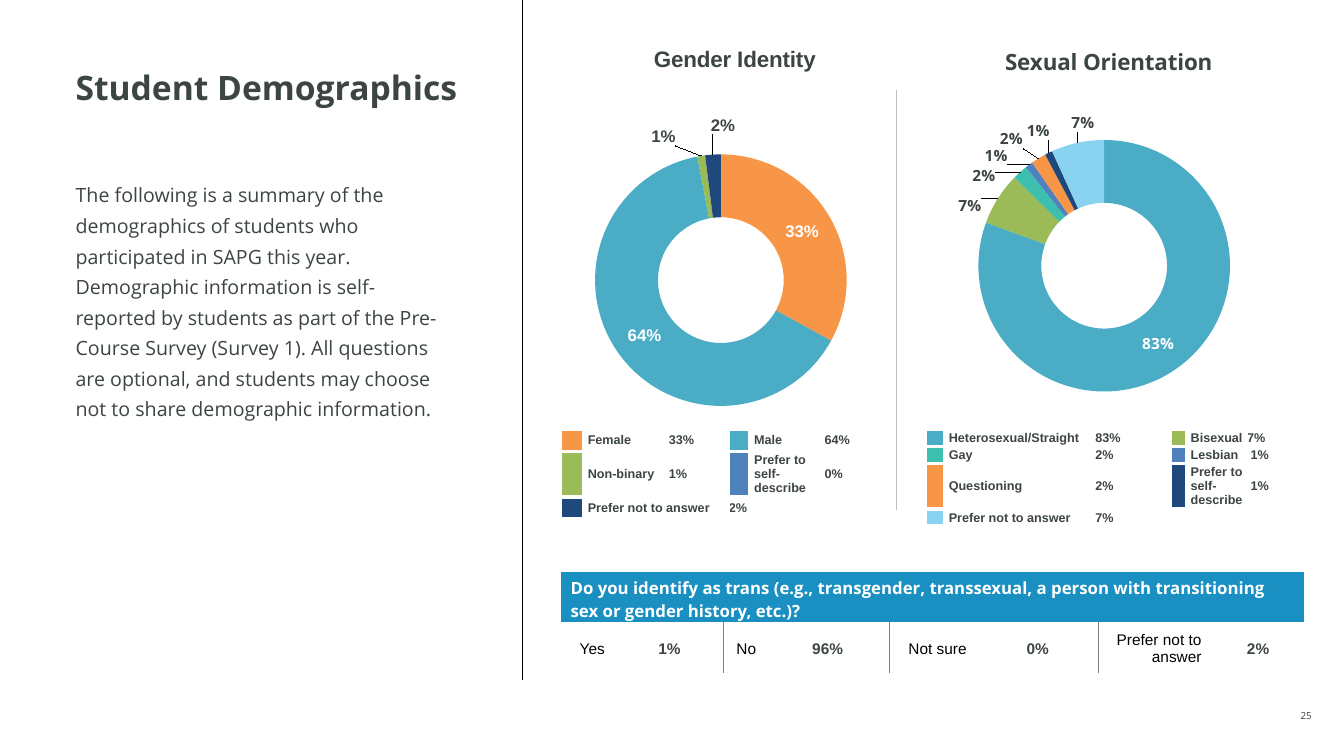
import math
from lxml import etree
from pptx import Presentation
from pptx import util as u
from pptx.chart import data as chart_data
from pptx.dml.color import RGBColor
from pptx.enum import chart as chart_enum
from pptx.enum import shapes, text
from pptx.oxml import parse_xml
from pptx.oxml.ns import nsdecls, qn

COLORS = {
    "ink": "3C4543", "white": "FFFFFF", "black": "000000", "banner": "1990C1",
    "divider": "BFBFBF", "separator": "808080", "orange": "F79646",
    "teal": "4BACC6", "green": "9BBB59", "blue": "4F81BD", "navy": "1F497D",
    "mint": "3CBFAE", "sky": "8AD3F0",
}
SUMMARY = (
    "The following is a summary of the demographics of students who participated "
    "in SAPG this year. Demographic information is self-reported by students as "
    "part of the Pre-Course Survey\u00a0(Survey 1). All questions are optional, and "
    "students may choose not to share demographic information."
)
TRANS_QUESTION = (
    "Do you identify as trans (e.g., transgender, transsexual, a person with "
    "transitioning sex or\u00a0gender history, etc.)?"
)
TRANS_ANSWERS = [("Yes", "1%"), ("No", "96%"), ("Not sure", "0%"),
                 ("Prefer not to answer", "2%")]
PERCENT = "0%;;"  # hides zero shares


def rgb(name):
    return RGBColor.from_string(COLORS[name])


def style_font(font, size, color="ink", bold=False, name="Open Sans"):
    font.size, font.bold, font.name = u.Pt(size), bold, name
    font.color.rgb = rgb(color)


def add_text(page, box, words, size, bold=False, spacing=1.0, align=None,
             anchor=text.MSO_ANCHOR.TOP):
    frame = page.shapes.add_textbox(*map(u.Inches, box)).text_frame
    frame.word_wrap, frame.vertical_anchor = True, anchor
    frame.margin_left = frame.margin_right = frame.margin_top = frame.margin_bottom = 0
    para = frame.paragraphs[0]
    para.text, para.line_spacing, para.alignment = words, spacing, align
    style_font(para.runs[0].font, size, bold=bold)


def add_rule(page, x, top, bottom, color):
    rule = page.shapes.add_connector(
        shapes.MSO_CONNECTOR.STRAIGHT, *map(u.Inches, (x, top, x, bottom)))
    rule.line.color.rgb, rule.line.width = rgb(color), u.Pt(1)
    etree.SubElement(rule.element.spPr, qn("a:effectLst"))


def layout_xml(x, y, width=None, height=None, edge=True):
    """Manual chart layout: from the chart's edge, or a shift from the default place."""
    sized = width is not None
    parts = [("layoutTarget", "inner")] if sized else []
    if edge:
        parts += [("xMode", "edge"), ("yMode", "edge")]
    parts += [("x", f"{x:.3f}"), ("y", f"{y:.3f}")]
    if sized:
        parts += [("w", f"{width:.3f}"), ("h", f"{height:.3f}")]
    body = "".join(f'<c:{tag} val="{value}"/>' for tag, value in parts)
    return parse_xml(f"<c:layout {nsdecls('c')}><c:manualLayout>{body}"
                     "</c:manualLayout></c:layout>")


def add_doughnut(page, box, title, title_x, font_name, label_size, plot, slices, callouts):
    """Callouts map a slice index to the slide point where its label is centred."""
    left, top, width, height = box
    values = [share for share, _ in slices]
    data = chart_data.CategoryChartData(number_format=PERCENT)
    data.categories = [str(i + 1) for i in range(len(slices))]
    data.add_series("Series 1", values)
    chart = page.shapes.add_chart(
        chart_enum.XL_CHART_TYPE.DOUGHNUT, *map(u.Inches, box), data).chart
    chart.has_legend = False
    style_font(chart.font, 10, name="Arial")
    chart.has_title = True
    heading = chart.chart_title
    heading.text_frame.text = title
    style_font(heading.text_frame.paragraphs[0].runs[0].font, 16, bold=True, name=font_name)
    heading.include_in_layout = False
    title_element = chart.element.xpath("c:chart/c:title")[0]
    plot_area = chart.element.xpath("c:chart/c:plotArea")[0]
    for parent, layout, place in ((title_element, layout_xml(title_x, 0), 1),
                                  (plot_area, layout_xml(*plot), 0)):
        for old in parent.findall(qn("c:layout")):
            parent.remove(old)
        parent.insert(place, layout)

    chart.plots[0].vary_by_categories = True
    series = chart.plots[0].series[0]
    labels = series.data_labels
    labels.show_value = True
    labels.number_format, labels.number_format_is_linked = PERCENT, False
    style_font(labels.font, label_size, "white", True, font_name)

    center_x = left + width * (plot[0] + plot[2] / 2)
    center_y = top + height * (plot[1] + plot[3] / 2)
    ring = 0.75 * min(width * plot[2], height * plot[3]) / 2
    for i, (share, color) in enumerate(slices):
        point = series.points[i]
        point.format.fill.solid()
        point.format.fill.fore_color.rgb = rgb(color)
        if i not in callouts:
            continue
        style_font(point.data_label.font, label_size, "ink", True, font_name)
        angle = 2 * math.pi * (sum(values[:i]) + share / 2) / sum(values)
        shift_x = (callouts[i][0] - center_x - ring * math.sin(angle)) / width
        shift_y = (callouts[i][1] - center_y + ring * math.cos(angle)) / height
        label = chart.element.xpath(f".//c:dLbl[c:idx/@val='{i}']")[0]
        label.insert(1, layout_xml(shift_x, shift_y, edge=False))


def add_grid(page, box, widths, heights):
    table = page.shapes.add_table(
        len(heights), len(widths), *map(u.Inches, box)).table
    table.first_row = table.horz_banding = False
    for column, width in zip(table.columns, widths):
        column.width = u.Inches(width)
    for row, height in zip(table.rows, heights):
        row.height = u.Inches(height)
    return table


def fill_cell(cell, words="", size=9, color="ink", bold=True, name="Arial",
              align=None, fill=None, margins=None, borders=()):
    """Borders are (side, colour, points), with sides in the order L, R, T, B."""
    cell.vertical_anchor = text.MSO_ANCHOR.MIDDLE
    if margins is not None:
        cell.margin_left = u.Inches(margins)
        cell.margin_right = cell.margin_top = cell.margin_bottom = 0
    para = cell.text_frame.paragraphs[0]
    para.text, para.alignment = words, align
    for span in para.runs:
        style_font(span.font, size, color, bold, name)
    if not words:
        para.font.size = u.Pt(8)
        etree.SubElement(cell._tc.xpath(".//a:p")[0], qn("a:endParaRPr"), sz="800")
    properties = cell._tc.get_or_add_tcPr()
    for side, border_color, points in borders:
        line = etree.SubElement(properties, qn(f"a:ln{side}"), w=str(u.Pt(points)))
        solid = etree.SubElement(line, qn("a:solidFill"))
        etree.SubElement(solid, qn("a:srgbClr"), val=COLORS[border_color])
    if fill:
        cell.fill.solid()
        cell.fill.fore_color.rgb = rgb(fill)
    else:
        cell.fill.background()


def add_legend(page, box, widths, row_height, rows, merges=()):
    """Each row holds swatch colour, name and share, twice over."""
    table = add_grid(page, box, widths, [row_height] * len(rows))
    for row, column in merges:
        table.cell(row, column).merge(table.cell(row, column + 1))
    gaps = [("T", "white", 3), ("B", "white", 3)]
    for r, row in enumerate(rows):
        for c, words in enumerate(row):
            swatch = words in COLORS
            fill_cell(table.cell(r, c), "" if swatch else words,
                      fill=words if swatch else None,
                      margins=0.05 if c % 3 == 1 else 0, borders=gaps)


def add_trans_table(page, box):
    widths = [0.54, 1.08, 0.42, 1.22, 0.87, 1.21, 1.12, 0.92]
    table = add_grid(page, box, widths, [0.53, 0.47])
    table.cell(0, 0).merge(table.cell(0, len(widths) - 1))
    fill_cell(table.cell(0, 0), TRANS_QUESTION, 12, "white", name="Open Sans", fill="banner")
    for i, (answer, share) in enumerate(TRANS_ANSWERS):
        first, last = i == 0, i == len(TRANS_ANSWERS) - 1
        outer = [("T", "white", 4.2), ("B", "white", 1)]
        start = ("L", "white" if first else "separator", 0.7)
        end = ("R", "white" if last else "separator", 0.7)
        fill_cell(table.cell(1, 2 * i), answer, 11, "black", False,
                  align=text.PP_ALIGN.RIGHT, borders=[start, ("R", "white", 2.1)] + outer)
        fill_cell(table.cell(1, 2 * i + 1), share, 11, align=text.PP_ALIGN.CENTER,
                  borders=[("L", "white", 2.1), end] + outer)


def main():
    deck = Presentation()
    deck.slide_width, deck.slide_height = u.Inches(13.33), u.Inches(7.5)
    page = deck.slides.add_slide(deck.slide_layouts[6])
    add_rule(page, 5.18, 0, 6.75, "black")
    add_text(page, (0.75, 0.71, 3.94, 0.7), "Student Demographics", 24, True, 0.9)
    add_text(page, (0.75, 1.75, 3.73, 3.07), SUMMARY, 14, spacing=1.3)
    add_text(page, (12.7, 7.01, 0.51, 0.15), "25", 7, align=text.PP_ALIGN.CENTER,
             anchor=text.MSO_ANCHOR.BOTTOM)
    add_rule(page, 8.89, 0.89, 5.06, "divider")

    add_doughnut(
        page, (5.55, 0.4, 3.2, 4), "Gender Identity", 0.28, "Arial", 12,
        (0.11, 0.19, 0.78, 0.81),
        [(0.33, "orange"), (0.64, "teal"), (0.01, "green"), (0, "blue"), (0.02, "navy")],
        {2: (6.58, 1.36), 4: (7.17, 1.25)})
    add_legend(
        page, (5.57, 4.26, 3.11, 0.89), [0.21, 0.82, 0.63, 0.2, 0.75, 0.5], 0.22,
        [("orange", "Female", " 33%", "teal", "Male", "64%"),
         ("green", "Non-binary", " 1%", "blue", "Prefer to self-describe", "0%"),
         ("navy", "Prefer not to answer", "", "2%", "", "")],
        merges=[(2, 1), (2, 3)])
    add_doughnut(
        page, (9.32, 0.4, 3.2, 3.76), "Sexual Orientation", 0.19, "Open Sans", 11,
        (0.12, 0.2, 0.78, 0.79),
        [(0.83, "teal"), (0.07, "green"), (0.02, "mint"), (0.01, "blue"),
         (0.02, "orange"), (0.01, "navy"), (0.07, "sky")],
        {1: (9.62, 2.03), 2: (9.76, 1.74), 3: (9.88, 1.54), 4: (10.03, 1.37),
         5: (10.3, 1.29), 6: (10.74, 1.21)})
    add_legend(
        page, (9.19, 4.26, 4.08, 0.95), [0.17, 1.47, 0.79, 0.14, 0.61, 0.91], 0.17,
        [("teal", "Heterosexual/Straight", " 83%", "green", "Bisexual", "7%"),
         ("mint", "Gay", " 2%", "blue", "Lesbian", " 1%"),
         ("orange", "Questioning", " 2%", "navy", "Prefer to self-describe", " 1%"),
         ("sky", "Prefer not to answer", " 7%", "", "", "")])
    add_trans_table(page, (5.56, 5.67, 7.38, 1))
    deck.save("out.pptx")


if __name__ == "__main__":
    main()
